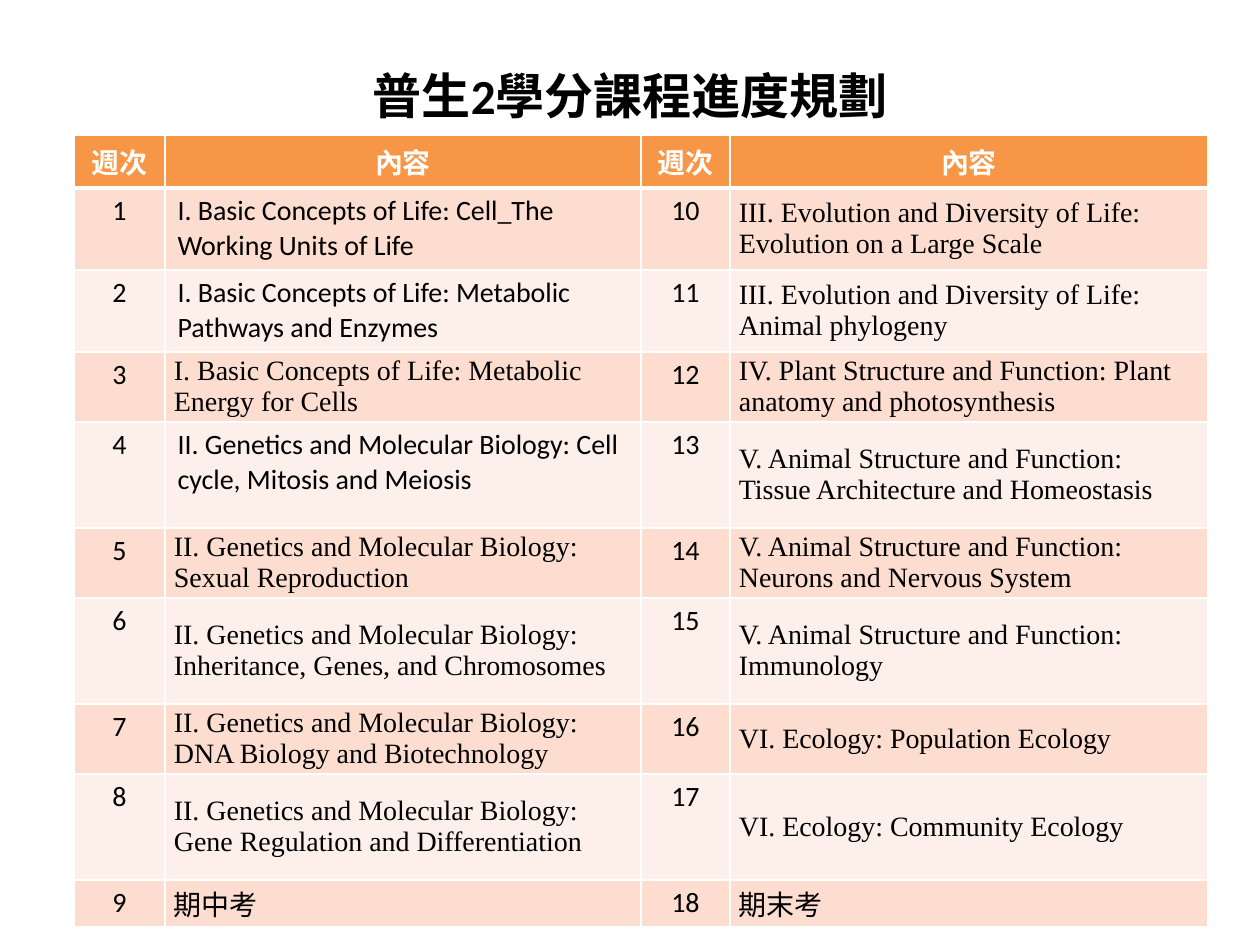
from dataclasses import dataclass

from lxml import etree
from pptx import Presentation
from pptx.dml.color import RGBColor
from pptx.enum.text import MSO_ANCHOR, PP_ALIGN
from pptx.oxml.ns import qn
from pptx.util import Emu, Pt

CENTER, LEFT = PP_ALIGN.CENTER, PP_ALIGN.LEFT
TOP, MIDDLE = MSO_ANCHOR.TOP, MSO_ANCHOR.MIDDLE
PX_PER_INCH = 126
BLANK_LAYOUT = 6


@dataclass(frozen=True)
class Theme:
    ink: str = "000000"
    white: str = "FFFFFF"
    header: str = "F79646"
    bands: tuple = ("FCDDCF", "FDEFE9")
    sans: str = "Calibri"
    serif: str = "Times New Roman"
    title_size: int = 28
    table_size: int = 16
    thin_rule: int = 1
    thick_rule: int = 3


THEME = Theme()

TITLE = "普生2學分課程進度規劃"
HEADINGS = ["週次", "內容"] * 2
LIFE = "I. Basic Concepts of Life: "
GENETICS = "II. Genetics and Molecular Biology: "
EVOLUTION = "III. Evolution and Diversity of Life: "
ANIMAL = "V. Animal Structure and Function: "
TOPICS = [
    LIFE + "Cell_The Working Units of Life",
    LIFE + "Metabolic Pathways and Enzymes",
    LIFE + "Metabolic Energy for Cells",
    GENETICS + "Cell cycle, Mitosis and Meiosis",
    GENETICS + "Sexual Reproduction",
    GENETICS + "Inheritance, Genes, and Chromosomes",
    GENETICS + "DNA Biology and Biotechnology",
    GENETICS + "Gene Regulation and Differentiation",
    "期中考",
    EVOLUTION + "Evolution on a Large Scale",
    EVOLUTION + "Animal phylogeny",
    "IV. Plant Structure and Function: Plant anatomy and photosynthesis",
    ANIMAL + "Tissue Architecture and Homeostasis",
    ANIMAL + "Neurons and Nervous System",
    ANIMAL + "Immunology",
    "VI. Ecology: Population Ecology",
    "VI. Ecology: Community Ecology",
    "期末考",
]
SANS_WEEKS = {1, 2, 4}  # topics set in the sans face, aligned to the top
COLUMN_WIDTHS = [91, 476, 89, 478]
ROW_HEIGHTS = [47, 82, 82, 70, 106, 70, 106, 70, 106, 47]


def px(length):
    return Emu(round(length * 914400 / PX_PER_INCH))


def add_text(text_frame, text, size, font, color, bold=False, align=CENTER):
    paragraph = text_frame.paragraphs[0]
    paragraph.alignment = align
    run = paragraph.add_run()
    run.text = text
    run.font.size = Pt(size)
    run.font.name = font
    run.font.bold = bold
    run.font.color.rgb = RGBColor.from_string(color)


def add_title(slide, left, top, width, height):
    shape = slide.shapes.add_textbox(px(left), px(top), px(width), px(height))
    text_frame = shape.text_frame
    text_frame.word_wrap = True
    text_frame.vertical_anchor = MIDDLE
    add_text(text_frame, TITLE, THEME.title_size, THEME.sans, THEME.ink, bold=True)


def set_borders(cell, row):
    rules = dict.fromkeys(("lnL", "lnR", "lnT", "lnB"), THEME.thin_rule)
    if row == 0:
        rules["lnB"] = THEME.thick_rule
    elif row == 1:
        rules["lnT"] = THEME.thick_rule
    properties = cell._tc.get_or_add_tcPr()
    for tag, points in rules.items():
        line = etree.SubElement(properties, qn(f"a:{tag}"), w=str(Pt(points)))
        fill = etree.SubElement(line, qn("a:solidFill"))
        etree.SubElement(fill, qn("a:srgbClr"), val=THEME.white)


def style_cell(cell, row, color):
    set_borders(cell, row)  # borders come before the fill in the cell's XML
    cell.fill.solid()
    cell.fill.fore_color.rgb = RGBColor.from_string(color)


def fill_topic(cell, week):
    font = THEME.sans
    if week not in SANS_WEEKS:
        font = THEME.serif
        cell.vertical_anchor = MIDDLE
        cell.margin_left = cell.margin_right = px(9)
        cell.margin_top = cell.margin_bottom = 0
    add_text(cell.text_frame, TOPICS[week - 1], THEME.table_size, font,
             THEME.ink, align=LEFT)


def add_schedule(slide, left, top):
    frame = slide.shapes.add_table(
        len(ROW_HEIGHTS), len(COLUMN_WIDTHS), px(left), px(top),
        px(sum(COLUMN_WIDTHS)), px(sum(ROW_HEIGHTS)))
    table = frame.table
    table.horz_banding = False
    for column, width in zip(table.columns, COLUMN_WIDTHS):
        column.width = px(width)
    for row, height in zip(table.rows, ROW_HEIGHTS):
        row.height = px(height)

    # Header row
    for column, heading in enumerate(HEADINGS):
        cell = table.cell(0, column)
        style_cell(cell, 0, THEME.header)
        add_text(cell.text_frame, heading, THEME.table_size, THEME.sans,
                 THEME.white, bold=True)

    # Weeks run down the left pair of columns, then down the right pair
    weeks_per_half = len(ROW_HEIGHTS) - 1
    for index in range(len(TOPICS)):
        half, offset = divmod(index, weeks_per_half)
        row, week = offset + 1, index + 1
        week_cell = table.cell(row, half * 2)
        topic_cell = table.cell(row, half * 2 + 1)
        for cell in (week_cell, topic_cell):
            cell.vertical_anchor = TOP
            style_cell(cell, row, THEME.bands[offset % 2])
        add_text(week_cell.text_frame, str(week), THEME.table_size, THEME.sans,
                 THEME.ink)
        fill_topic(topic_cell, week)


def main():
    presentation = Presentation()
    presentation.slide_width = px(1260)
    presentation.slide_height = px(945)
    slide = presentation.slides.add_slide(presentation.slide_layouts[BLANK_LAYOUT])
    add_schedule(slide, 74, 135)
    add_title(slide, 63, 55, 1134, 79)
    presentation.save("out.pptx")


if __name__ == "__main__":
    main()
